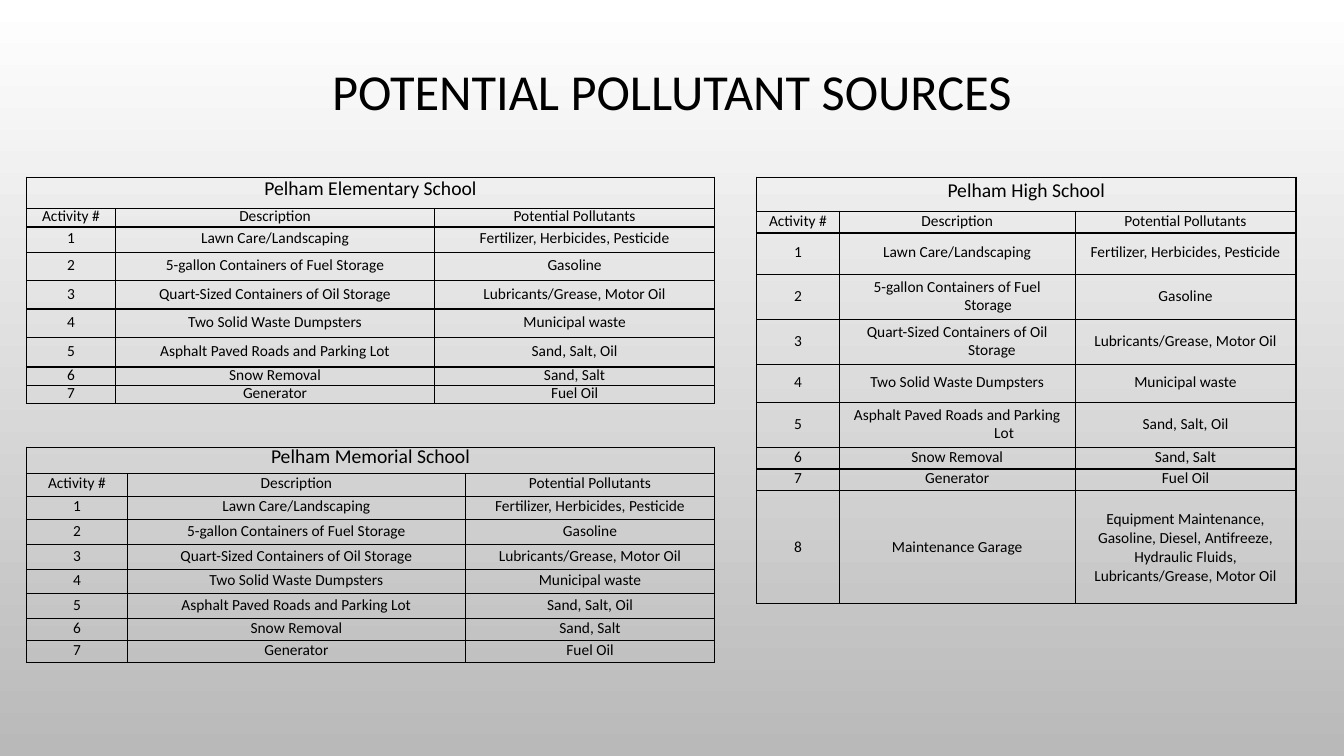
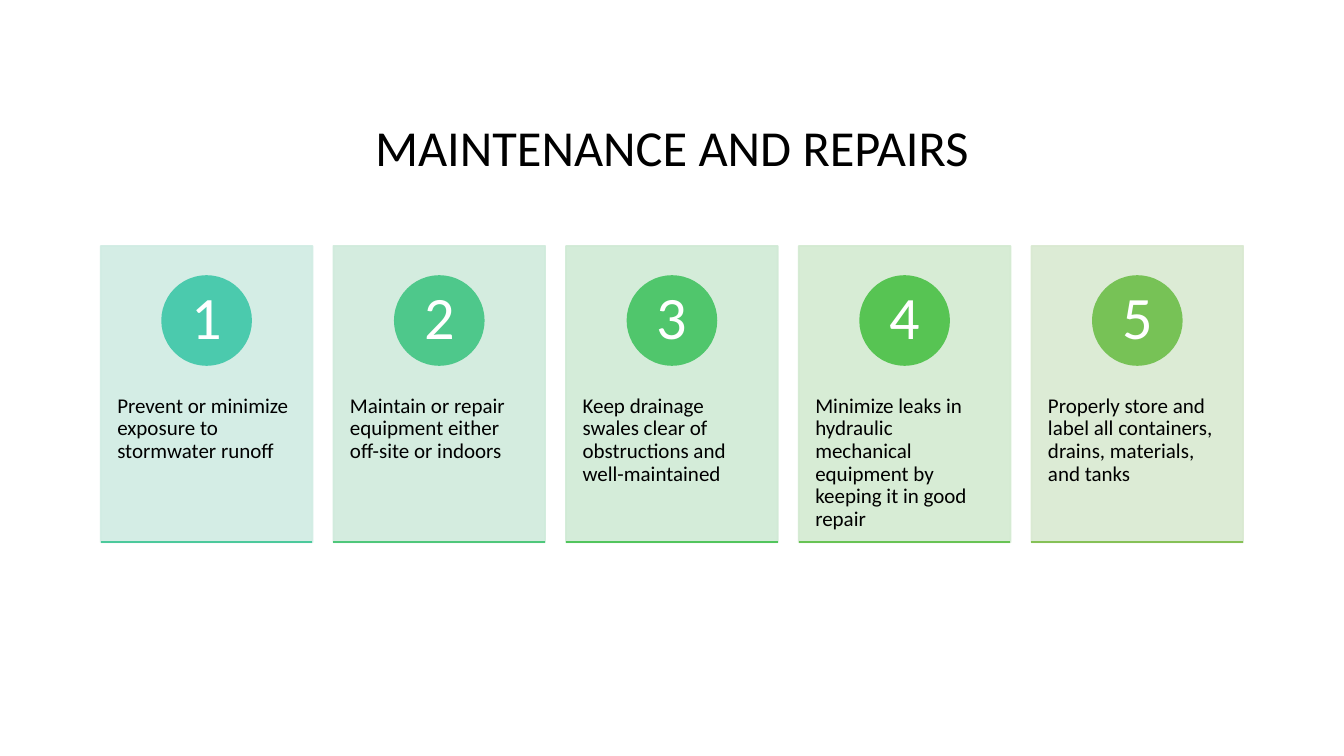
from dataclasses import dataclass

from lxml import etree
from pptx import Presentation
from pptx.dml.color import RGBColor
from pptx.enum.shapes import MSO_CONNECTOR as CONN, MSO_SHAPE as SHAPE
from pptx.enum.text import MSO_ANCHOR as ANCHOR, PP_ALIGN as ALIGN
from pptx.oxml.ns import qn
from pptx.util import Pt


@dataclass(frozen=True)
class Theme:
    font: str = "Calibri"
    ink: str = "000000"
    paper: str = "FFFFFF"
    shade: str = "B9B9B9"
    title: float = 36
    school: float = 14
    cell: float = 11
    card: float = 15
    number: float = 43
    rule: float = 1.25
    border: float = 1


T = Theme()
rgb = RGBColor.from_string


def write(tf, text, size, color=T.ink, margins=(0, 0, 0, 0), indent=(0, 0, 0), **fmt):
    """Fill a frame, one paragraph a line; indent is left, first line, right."""
    for side, value in zip(("left", "top", "right", "bottom"), margins):
        setattr(tf, f"margin_{side}", Pt(value))
    for i, line in enumerate(text.split("\n")):
        p = tf.paragraphs[0] if i == 0 else tf.add_paragraph()
        for key, value in fmt.items():
            setattr(p, key, value)
        for key, value in zip(("marL", "indent", "marR"), indent):
            p._p.get_or_add_pPr().set(key, str(int(Pt(value))))
        r = p.add_run()
        r.text = line
        r.font.name, r.font.size = T.font, Pt(size)
        r.font.color.rgb = rgb(color)


def add_title(s, text, top, height, anchor):
    tf = s.shapes.add_textbox(Pt(72), Pt(top), Pt(816), Pt(height)).text_frame
    tf.word_wrap, tf.vertical_anchor = True, anchor
    write(tf, text, T.title, margins=(7.2, 3.6, 7.2, 3.6), alignment=ALIGN.CENTER, line_spacing=0.9)


prs = Presentation()
prs.slide_width, prs.slide_height = Pt(960), Pt(540)
blank = prs.slide_layouts[6]

# Pollutant tables
s = prs.slides.add_slide(blank)
fill = s.background.fill
fill.gradient()
fill.gradient_angle = 270
for stop, color in zip(fill.gradient_stops, (T.paper, T.shade)):
    stop.color.rgb = rgb(color)
add_title(s, "POTENTIAL POLLUTANT SOURCES", 0, 134, ANCHOR.MIDDLE)

header = ("Activity #", "Description", "Potential Pollutants")
activities = [
    ("Lawn Care/Landscaping", "Fertilizer, Herbicides, Pesticide"),
    ("5-gallon Containers of Fuel Storage", "Gasoline"),
    ("Quart-Sized Containers of Oil Storage", "Lubricants/Grease, Motor Oil"),
    ("Two Solid Waste Dumpsters", "Municipal waste"),
    ("Asphalt Paved Roads and Parking Lot", "Sand, Salt, Oil"),
    ("Snow Removal", "Sand, Salt"),
    ("Generator", "Fuel Oil"),
    ("Maintenance Garage", "Equipment Maintenance, Gasoline, Diesel, Antifreeze,\n"
                           "Hydraulic Fluids, Lubricants/Grease, Motor Oil"),
]
GARAGE = 8
column_indents = [(0, 0, 0), (19, 0, 19), (8, 0, 8)]
hanging = {2: (66, -44, 22), 3: (66, -49.5, 16.5), 5: (75.5, -67, 8.5)}
schools = [
    ("Pelham Memorial School", 19, 319.5, (72, 241.5, 178),
     (18.9, 16, 16.5, 18.2, 17.6, 17.3, 18, 15.8, 15.7)),
    ("Pelham Elementary School", 19, 126.5, (63.5, 228, 200),
     (22.5, 13.2, 18, 20, 20.5, 20.5, 21, 13, 13)),
    ("Pelham High School", 540.5, 126.5, (59, 168.5, 157.7),
     (24.3, 15.6, 29.5, 32.2, 32.2, 27.2, 32.2, 15.4, 15.7, 80.7)),
]
for school, left, top, widths, heights in schools:
    table = s.shapes.add_table(len(heights), 3, Pt(left), Pt(top),
                               Pt(sum(widths)), Pt(sum(heights))).table
    table.first_row = table.horz_banding = False
    for column, width in zip(table.columns, widths):
        column.width = Pt(width)
    for row, height in zip(table.rows, heights):
        row.height = Pt(height)
    table.cell(0, 0).merge(table.cell(0, 2))
    for cell in table.iter_cells():
        cell.fill.background()
        cell.vertical_anchor = ANCHOR.MIDDLE
        cell.margin_left = cell.margin_top = cell.margin_right = cell.margin_bottom = 0
        for i, tag in enumerate(("a:lnL", "a:lnR", "a:lnT", "a:lnB")):
            ln = etree.Element(qn(tag), w=str(int(Pt(T.border))))
            solid = etree.SubElement(ln, qn("a:solidFill"))
            etree.SubElement(solid, qn("a:srgbClr"), val=T.ink)
            cell._tc.get_or_add_tcPr().insert(i, ln)
    write(table.cell(0, 0).text_frame, school, T.school,
          alignment=ALIGN.CENTER, line_spacing=Pt(11.7))
    rows = [header] + [(str(n), *a) for n, a in enumerate(activities, 1)]
    for n, texts in enumerate(rows[:len(heights) - 1]):
        spacing = 1.0 if n == GARAGE else Pt(12.7 if n in hanging else 11.7)
        for c, text in enumerate(texts):
            indent = hanging.get(n, column_indents[c]) if c == 1 else column_indents[c]
            drop = 19 if n == GARAGE and c == 0 else 0
            write(table.cell(n + 1, c).text_frame, text, T.cell, margins=(0, drop, 0, 0),
                  indent=indent, alignment=ALIGN.CENTER, line_spacing=spacing)

# Maintenance cards
s = prs.slides.add_slide(blank)
s.background.fill.solid()
s.background.fill.fore_color.rgb = rgb(T.paper)
add_title(s, "MAINTENANCE AND REPAIRS", 84.2, 80, ANCHOR.TOP)

cards = [
    ("Prevent or minimize exposure to stormwater runoff", "D0ECE3", "4BCAAD", "4CC99C"),
    ("Maintain or repair equipment either off-site or indoors", "D0EBDC", "4EC88B", "4FC77B"),
    ("Keep drainage swales clear of obstructions and well-maintained",
     "D0EAD5", "50C66C", "52C55D"),
    ("Minimize leaks in hydraulic mechanical equipment by keeping it in good repair",
     "D3EAD1", "57C453", "68C354"),
    ("Properly store and label all containers, drains, materials, and tanks",
     "D9E9D1", "77C256", "86C157"),
]
card_w, card_h, card_top, pitch, dot = 151.2, 211.7, 175.7, 166.2, 63.5
bottom = card_top + card_h
for i, (text, tint, dot_color, rule_color) in enumerate(cards):
    left = 72 + i * pitch
    card = s.shapes.add_shape(SHAPE.RECTANGLE, Pt(left), Pt(card_top), Pt(card_w), Pt(card_h))
    circle = s.shapes.add_shape(SHAPE.OVAL, Pt(left + (card_w - dot) / 2), Pt(card_top + 21.5),
                                Pt(dot), Pt(dot))
    for sp, color in ((card, tint), (circle, dot_color)):
        sp.shadow.inherit = False
        sp.fill.solid()
        sp.fill.fore_color.rgb = sp.line.color.rgb = rgb(color)
        sp.line.width = Pt(T.rule)
    for clr in card._element.spPr.iter(qn("a:srgbClr")):
        etree.SubElement(clr, qn("a:alpha"), val="90000")

    tf = card.text_frame
    tf.word_wrap, tf.vertical_anchor = True, ANCHOR.TOP
    write(tf, text, T.card, margins=(11.8, 106.5, 11.8, 0), alignment=ALIGN.LEFT, line_spacing=0.9)
    tf = circle.text_frame
    tf.word_wrap, tf.vertical_anchor = False, ANCHOR.MIDDLE
    write(tf, str(i + 1), T.number, T.paper, alignment=ALIGN.CENTER, line_spacing=0.9)

    rule = s.shapes.add_connector(CONN.STRAIGHT, Pt(left), Pt(bottom), Pt(left + card_w), Pt(bottom))
    rule.line.color.rgb, rule.line.width = rgb(rule_color), Pt(T.rule)
    etree.SubElement(rule._element.spPr, qn("a:effectLst"))

prs.save("out.pptx")
